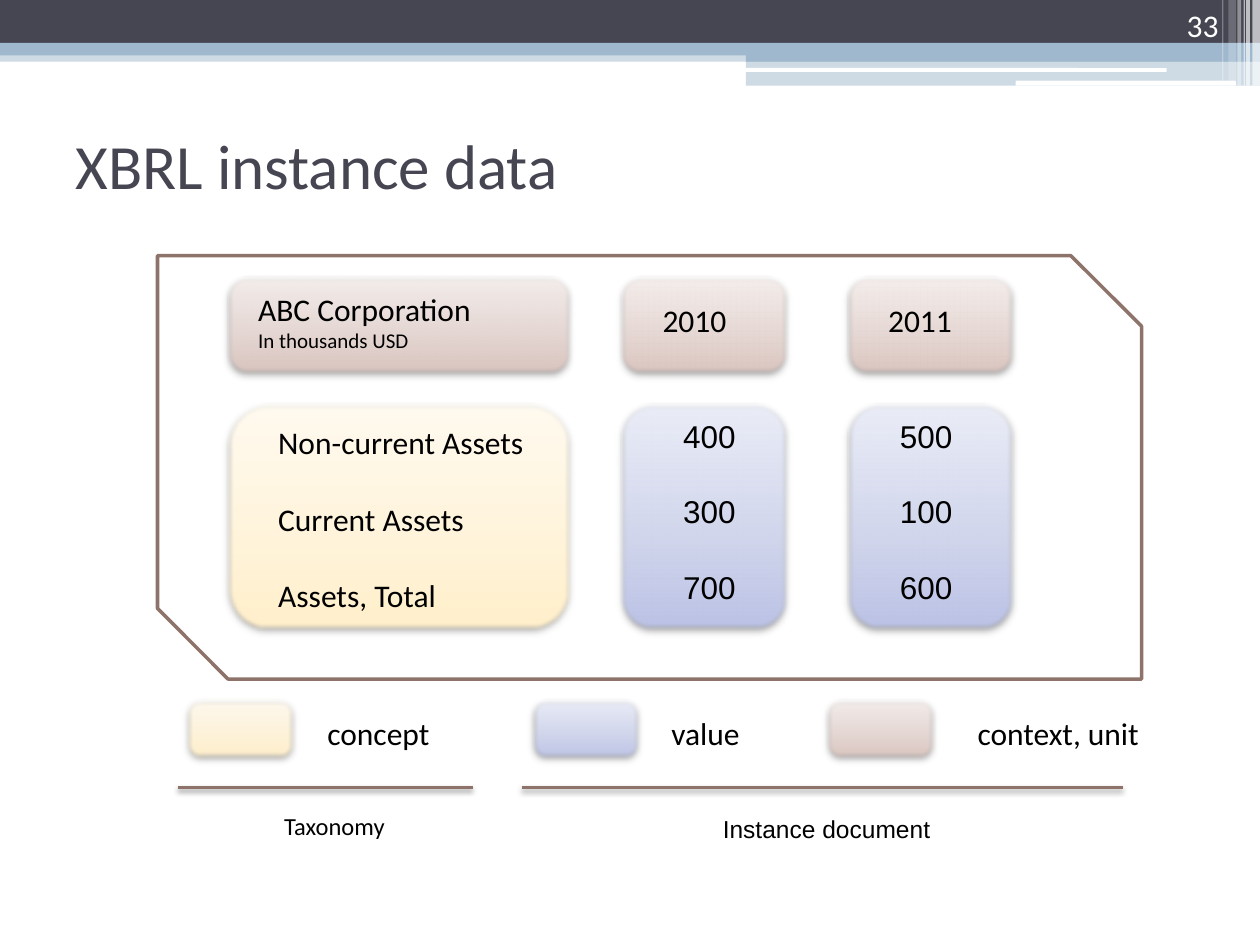
import lxml.etree
import pptx
import pptx.dml.color
import pptx.enum.shapes
import pptx.enum.text
import pptx.oxml.ns
import pptx.util

RGBColor = pptx.dml.color.RGBColor
Shape = pptx.enum.shapes.MSO_SHAPE
Align = pptx.enum.text.PP_ALIGN
Anchor = pptx.enum.text.MSO_ANCHOR
qn = pptx.oxml.ns.qn

WHITE = RGBColor(0xFF, 0xFF, 0xFF)
BLACK = RGBColor(0x00, 0x00, 0x00)
SLATE = RGBColor(0x46, 0x46, 0x53)
SKY = RGBColor(0x9F, 0xB8, 0xCD)
BROWN = RGBColor(0x8E, 0x73, 0x6A)

# Each palette: outline, then the gradient from bottom to top
CONCEPT = (RGBColor(0xF8, 0xD7, 0x74), RGBColor(0xFF, 0xEE, 0xC9),
           RGBColor(0xFF, 0xF3, 0xD8), RGBColor(0xFF, 0xFA, 0xF0))
VALUE = (RGBColor(0x6E, 0x79, 0xA1), RGBColor(0xBB, 0xC2, 0xE6),
         RGBColor(0xCF, 0xD4, 0xEC), RGBColor(0xEC, 0xEE, 0xF8))
CONTEXT = (RGBColor(0x8C, 0x70, 0x67), RGBColor(0xDA, 0xC4, 0xBE),
           RGBColor(0xE4, 0xD5, 0xD1), RGBColor(0xF5, 0xEF, 0xED))
GRADIENT_STOPS = (0, 35, 100)
NO_TABLE_STYLE = "{2D5ABB26-0587-4C30-8999-92F81FD0307C}"


class SlideBuilder:
    """Places elements on a grid of 100 columns by 75 rows."""

    COLUMNS, ROWS = 100, 75
    FONT = "Calibri"

    def __init__(self, presentation):
        self.column = presentation.slide_width / self.COLUMNS
        self.row = presentation.slide_height / self.ROWS
        self.slide = presentation.slides.add_slide(presentation.slide_layouts[6])

    def place(self, left, top, width, height):
        return (round(left * self.column), round(top * self.row),
                round(width * self.column), round(height * self.row))

    @staticmethod
    def element(parent, tag, **attributes):
        values = {name: str(value) for name, value in attributes.items()}
        return lxml.etree.SubElement(parent, qn(tag), values)

    def shadow(self, shape, blur, distance, opacity):
        effects = self.element(shape._element.spPr, "a:effectLst")
        outer = self.element(effects, "a:outerShdw", blurRad=pptx.util.Pt(blur),
                             dist=pptx.util.Pt(distance), dir=5400000, rotWithShape=0)
        color = self.element(outer, "a:srgbClr", val=BLACK)
        self.element(color, "a:alpha", val=opacity * 1000)
        return effects

    def bar(self, box, color, opacity=100, kind=Shape.RECTANGLE):
        shape = self.slide.shapes.add_shape(kind, *self.place(*box))
        shape.shadow.inherit = False
        shape.fill.solid()
        shape.fill.fore_color.rgb = color
        shape.line.fill.background()
        if opacity < 100:
            color_element = shape._element.spPr.find(".//" + qn("a:srgbClr"))
            self.element(color_element, "a:alpha", val=opacity * 1000)

    def card(self, box, palette):
        shape = self.slide.shapes.add_shape(Shape.ROUNDED_RECTANGLE, *self.place(*box))
        outline, *colors = palette
        shape.fill.gradient()
        shape.fill.gradient_angle = 90
        stops = shape._element.spPr.find(".//" + qn("a:gsLst"))
        stops.clear()
        for position, color in zip(GRADIENT_STOPS, colors):
            stop = self.element(stops, "a:gs", pos=position * 1000)
            self.element(stop, "a:srgbClr", val=color)
        shape.line.color.rgb = outline
        shape.line.width = pptx.util.Pt(0.75)
        effects = self.shadow(shape, 4.1, 2, 40)
        self.element(effects, "a:softEdge", rad=pptx.util.Pt(2.5))

    def frame(self, box):
        shape = self.slide.shapes.add_shape(Shape.SNIP_2_DIAG_RECTANGLE, *self.place(*box))
        shape.shadow.inherit = False
        shape.fill.background()
        shape.line.color.rgb = BROWN
        shape.line.width = pptx.util.Pt(2)

    def rule(self, start, end, row):
        left, top, right, bottom = self.place(start, row, end, row)
        line = self.slide.shapes.add_connector(
            pptx.enum.shapes.MSO_CONNECTOR.STRAIGHT, left, top, right, bottom)
        line.line.color.rgb = BROWN
        line.line.width = pptx.util.Pt(2)
        self.shadow(line, 3.1, 1.6, 38)

    def run(self, paragraph, text, size=18, color=BLACK, font=FONT):
        run = paragraph.add_run()
        run.text = text
        run.font.size = pptx.util.Pt(size)
        run.font.name = font
        run.font.color.rgb = color

    def text(self, box, lines, align=Align.LEFT, anchor=Anchor.TOP, gap=0, **style):
        """Each line is a (text, size) pair; gap is the space between lines."""
        frame = self.slide.shapes.add_textbox(*self.place(*box)).text_frame
        frame.word_wrap = True
        frame.vertical_anchor = anchor
        for index, (text, size) in enumerate(lines):
            paragraph = frame.add_paragraph() if index else frame.paragraphs[0]
            paragraph.alignment = align
            if index and gap:
                paragraph.space_before = pptx.util.Pt(gap)
            self.run(paragraph, text, size, **style)
        return frame

    def table(self, box, rows):
        graphic = self.slide.shapes.add_table(len(rows), len(rows[0]), *self.place(*box))
        table = graphic.table
        table.first_row = table.horz_banding = False
        graphic._element.find(".//" + qn("a:tableStyleId")).text = NO_TABLE_STYLE
        for row, values in enumerate(rows):
            for column, value in enumerate(values):
                cell = table.cell(row, column)
                cell.fill.background()
                paragraph = cell.text_frame.paragraphs[0]
                paragraph.alignment = Align.CENTER
                self.run(paragraph, value, font="Arial")


def main():
    presentation = pptx.Presentation()
    presentation.slide_width = pptx.util.Inches(10)
    presentation.slide_height = pptx.util.Inches(7.5)
    builder = SlideBuilder(presentation)

    # Header bands
    builder.bar((0, 4, 100, 0.9), SKY, 50)
    builder.bar((0, 0, 100, 3.4), SLATE)
    builder.bar((0, 3.4, 100, 1), SKY)
    builder.bar((59.2, 3.9, 40.8, 1), SKY)
    builder.bar((59.2, 4.8, 40.8, 2), SKY, 50)
    for box in ((59.1, 5.4, 33.5, 0.3), (80.6, 6.4, 17.5, 0.4)):
        builder.bar(box, WHITE, kind=Shape.ROUNDED_RECTANGLE)

    # Translucent stripes at the right edge: left, width, height, opacity
    for left, width, height, opacity in (
            (99.4, 0.6, 6.8, 65), (98.9, 0.3, 6.8, 65), (98.7, 0.1, 6.8, 60),
            (98.2, 0.3, 6.8, 40), (97.5, 0.6, 6.4, 20), (97, 0.1, 6.4, 30)):
        builder.bar((left, 0, width, height), WHITE, opacity)

    # Title and slide number
    builder.text((5, 7.6, 90, 10.9), [("XBRL instance data", 36)],
                 anchor=Anchor.MIDDLE, color=SLATE)
    builder.text((89.4, 0, 8.3, 4), [("33", 18)], Align.RIGHT, Anchor.BOTTOM, color=WHITE)

    # Statement cards: a context row above a row of concepts and values
    for left, width, palette in ((18, 27.3, CONCEPT), (49.2, 13.3, VALUE),
                                 (67.2, 13.3, VALUE)):
        builder.card((left, 21.9, width, 7.8), CONTEXT)
        builder.card((left, 32, width, 18), palette)
    builder.frame((12.5, 20.3, 78.1, 33.6))

    # Statement text
    builder.text((21.1, 33.1, 22.7, 16.2),
                 [(name, 18) for name in ("Non-current Assets", "Current Assets",
                                          "Assets, Total")], gap=22)
    builder.table((47.7, 32.8, 34.4, 18),
                  [("400", "500"), ("300", "100"), ("700", "600")])
    years = builder.text((51.6, 23.4, 28.9, 4), [("2010\t2011", 18)])
    properties = years.paragraphs[0]._p.get_or_add_pPr()
    tabs = builder.element(properties, "a:tabLst")
    builder.element(tabs, "a:tab", pos=round(17.9 * builder.column), algn="l")
    builder.text((19.5, 22.5, 24.2, 6.1),
                 [("ABC Corporation", 18), ("In thousands USD", 12)])

    # Legend
    for swatch, left, width, label, palette in (
            (14.8, 25, 13.3, "concept", CONCEPT),
            (42.2, 52.3, 11.7, "value", VALUE),
            (65.6, 76.6, 17.5, "context, unit", CONTEXT)):
        builder.card((swatch, 55.5, 8.6, 4.7), palette)
        builder.text((left, 56.2, width, 4), [(label, 18)])

    # Document groups under the legend
    builder.rule(14.1, 37.5, 62.5)
    builder.rule(41.4, 89.1, 62.5)
    builder.text((16.4, 63.9, 20.3, 3.4), [("Taxonomy", 14)], Align.CENTER)
    builder.text((49.2, 64.1, 32.8, 3.4), [("Instance document", 14)],
                 Align.CENTER, font="Arial")

    presentation.save("out.pptx")


if __name__ == "__main__":
    main()
